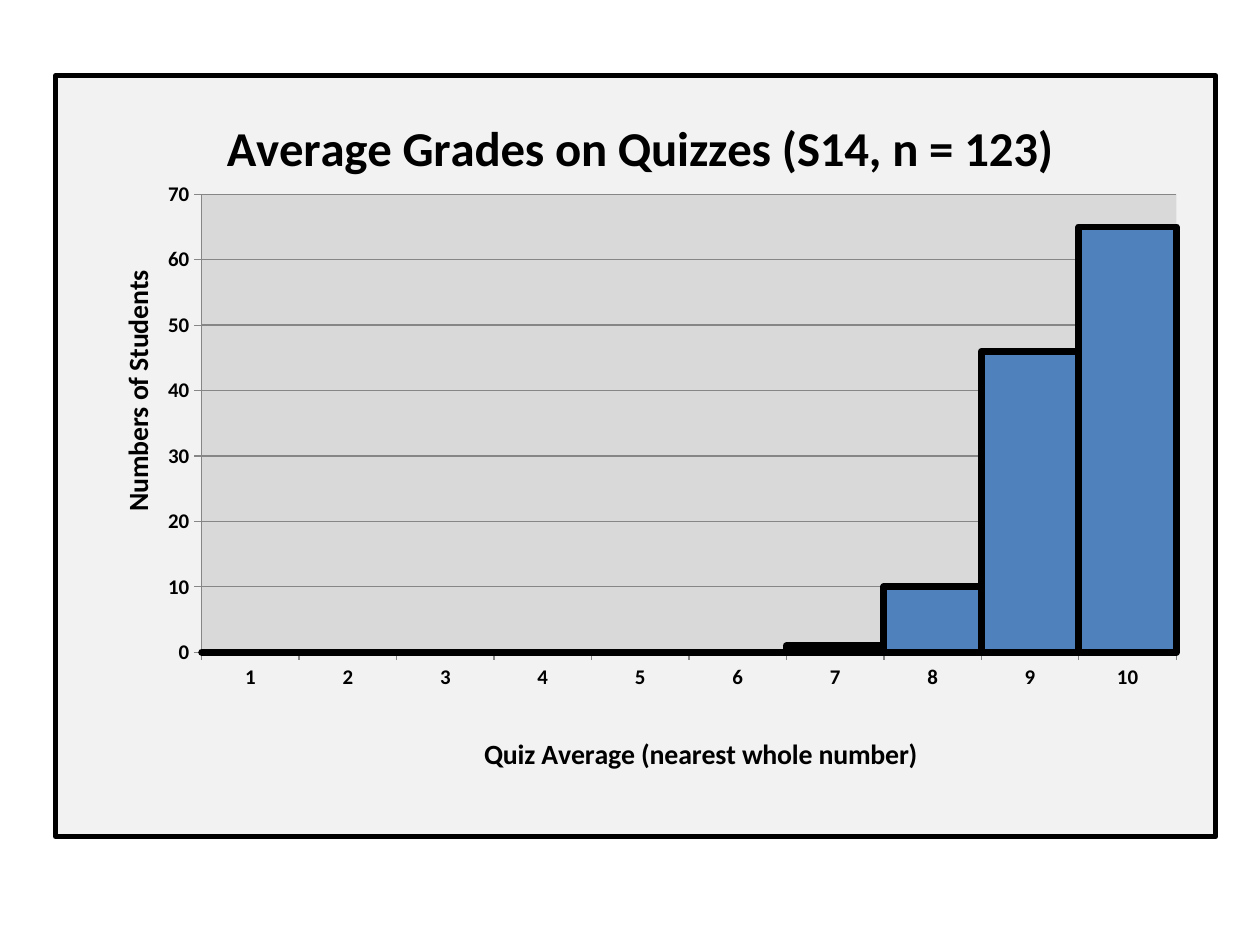
from dataclasses import dataclass

from pptx import Presentation
from pptx.chart.data import CategoryChartData
from pptx.dml.color import RGBColor
from pptx.enum.chart import XL_CHART_TYPE, XL_TICK_MARK
from pptx.oxml import parse_xml
from pptx.oxml.ns import nsdecls, qn
from pptx.util import Inches, Pt


@dataclass(frozen=True)
class Theme:
    """Colours, font and type sizes of the slide."""
    font: str = "Calibri"
    ink: str = "000000"
    panel: str = "F2F2F2"
    plot: str = "D9D9D9"
    bar: str = "4F81BD"
    grid: str = "868686"
    base_size: int = 10
    label_size: int = 12
    axis_title_size: int = 16
    title_size: int = 28
    frame_width: int = 3
    bar_line_width: int = 4


THEME = Theme()
STUDENTS_BY_GRADE = [0, 0, 0, 0, 0, 0, 1, 10, 46, 65]


def area_format(fill, line=None, width=0):
    """Return shape properties for a chart area."""
    stroke = f'<a:solidFill><a:srgbClr val="{line}"/></a:solidFill>' if line else "<a:noFill/>"
    return parse_xml(
        f'<c:spPr {nsdecls("c", "a")}>'
        f'<a:solidFill><a:srgbClr val="{fill}"/></a:solidFill>'
        f'<a:ln w="{Pt(width)}">{stroke}<a:round/></a:ln></c:spPr>'
    )


def place(parent, left, top, width=None, height=None):
    """Give a chart part a manual layout in fractions of the chart."""
    for old in parent.findall(qn("c:layout")):
        parent.remove(old)
    target = '<c:layoutTarget val="inner"/>' if width else ""
    modes = '<c:xMode val="edge"/><c:yMode val="edge"/>'
    lengths = {"x": left, "y": top, "w": width, "h": height}
    values = "".join(f'<c:{key} val="{value}"/>' for key, value in lengths.items() if value)
    layout = parse_xml(
        f'<c:layout {nsdecls("c")}><c:manualLayout>{target}{modes}{values}'
        "</c:manualLayout></c:layout>"
    )
    text = parent.find(qn("c:tx"))
    parent.insert(0 if text is None else 1, layout)


def style_font(font, size, bold=True):
    """Apply the theme font at a given size."""
    font.name = THEME.font
    font.size = Pt(size)
    font.bold = bold
    font.color.rgb = RGBColor.from_string(THEME.ink)


def set_title(title, text, size, left, top):
    """Write, style and place a chart or axis title."""
    para = title.text_frame.paragraphs[0]
    para.text = text
    style_font(para.runs[0].font, size)
    place(title.element, left, top)


def style_line(line, color, width):
    """Set the colour and width of a line."""
    line.color.rgb = RGBColor.from_string(color)
    line.width = Pt(width)


def style_axis(axis, title, left, top):
    """Style an axis with its labels and title."""
    axis.major_tick_mark = XL_TICK_MARK.OUTSIDE
    axis.minor_tick_mark = XL_TICK_MARK.NONE
    style_font(axis.tick_labels.font, THEME.label_size)
    style_line(axis.format.line, THEME.grid, 0.75)
    set_title(axis.axis_title, title, THEME.axis_title_size, left, top)


def add_histogram(page, left, top, width, height):
    """Add the quiz grade histogram in the given box."""
    data = CategoryChartData()
    data.categories = [str(grade) for grade in range(1, 11)]
    data.add_series("Series 1", STUDENTS_BY_GRADE)
    chart = page.shapes.add_chart(
        XL_CHART_TYPE.COLUMN_CLUSTERED, left, top, width, height, data
    ).chart
    chart.has_legend = False
    style_font(chart.font, THEME.base_size, bold=False)

    root = chart.element.find(qn("c:chart"))
    root.addnext(area_format(THEME.panel, THEME.ink, THEME.frame_width))
    plot_area = root.find(qn("c:plotArea"))
    plot_area.append(area_format(THEME.plot))
    place(plot_area, 0.126, 0.156, 0.84, 0.602)

    chart.has_title = True
    set_title(chart.chart_title, "Average Grades on Quizzes (S14, n = 123)",
              THEME.title_size, 0.14, 0.04)
    style_axis(chart.category_axis, "Quiz Average (nearest whole number)", 0.365, 0.86)
    style_axis(chart.value_axis, "Numbers of Students", 0.05, 0.25)
    value_axis = chart.value_axis
    value_axis.minimum_scale, value_axis.maximum_scale = 0, 70
    value_axis.major_unit = 10
    value_axis.has_major_gridlines = True
    style_line(value_axis.major_gridlines.format.line, THEME.grid, 0.75)

    plot = chart.plots[0]
    plot.gap_width = 0
    plot.vary_by_categories = False
    bars = plot.series[0].format
    bars.fill.solid()
    bars.fill.fore_color.rgb = RGBColor.from_string(THEME.bar)
    style_line(bars.line, THEME.ink, THEME.bar_line_width)


def main():
    """Build and save the deck."""
    deck = Presentation()
    deck.slide_width, deck.slide_height = Inches(10), Inches(7.5)
    page = deck.slides.add_slide(deck.slide_layouts[6])
    add_histogram(page, Inches(0.42), Inches(0.58), Inches(9.25), Inches(6.08))
    deck.save("out.pptx")


if __name__ == "__main__":
    main()
